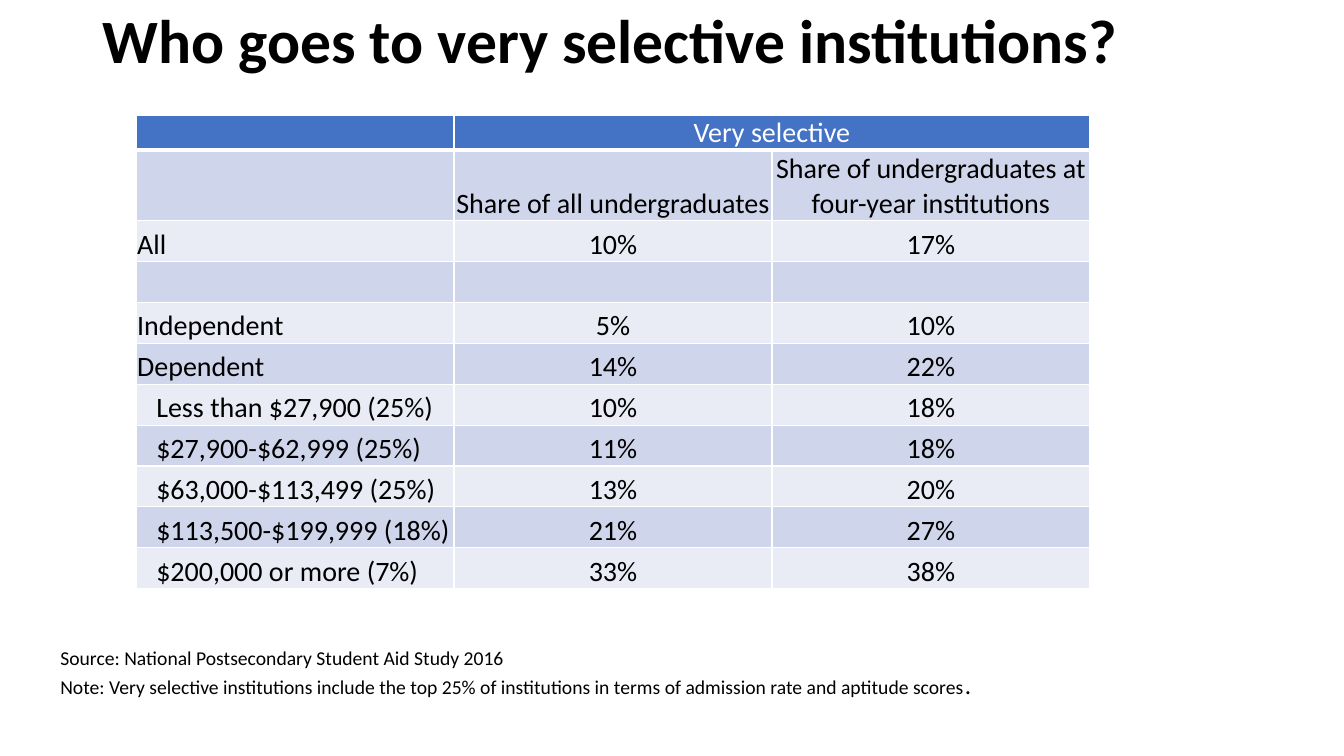
from dataclasses import dataclass

from lxml.etree import SubElement
from pptx import Presentation
from pptx.dml.color import RGBColor
from pptx.enum.text import MSO_ANCHOR, PP_ALIGN
from pptx.oxml.ns import qn
from pptx.slide import Slide
from pptx.table import _Cell
from pptx.text.text import _Run
from pptx.util import Inches, Pt

BODY_ROW_HEIGHT = 3.65 / 9
INCOME_INDENT = 0.19


@dataclass(frozen=True)
class Theme:
    font: str = "Calibri"
    ink: str = "000000"
    white: str = "FFFFFF"
    header: str = "4472C4"
    bands: tuple[str, str] = ("E9EBF5", "CFD5EA")
    title_size: int = 44
    table_size: int = 20
    note_size: int = 14
    stop_size: int = 18
    rule: int = 1
    header_rule: int = 3


@dataclass(frozen=True)
class ShareRow:
    group: str = ""
    all_undergraduates: str = ""
    four_year: str = ""
    height: float = BODY_ROW_HEIGHT
    indent: float = 0


THEME = Theme()

ROWS = [
    ShareRow("", "Very selective", height=0.35),
    ShareRow("", "Share of all undergraduates",
             "Share of undergraduates at four-year institutions", height=0.7),
    ShareRow("All", "10%", "17%"),
    ShareRow(),
    ShareRow("Independent", "5%", "10%"),
    ShareRow("Dependent", "14%", "22%"),
    ShareRow("Less than $27,900 (25%)", "10%", "18%", indent=INCOME_INDENT),
    ShareRow("$27,900-$62,999 (25%)", "11%", "18%", indent=INCOME_INDENT),
    ShareRow("$63,000-$113,499 (25%)", "13%", "20%", indent=INCOME_INDENT),
    ShareRow("$113,500-$199,999 (18%)", "21%", "27%", indent=INCOME_INDENT),
    ShareRow("$200,000 or more (7%)", "33%", "38%", indent=INCOME_INDENT),
]


def style_run(run: _Run, size: int, color: str = THEME.ink, bold: bool = False) -> None:
    run.font.name = THEME.font
    run.font.size = Pt(size)
    run.font.bold = bold
    run.font.color.rgb = RGBColor.from_string(color)


def add_borders(cell: _Cell, bottom: int) -> None:
    """Draw white rules; call before the fill, which must follow them in the XML."""
    properties = cell._tc.get_or_add_tcPr()
    widths = {"a:lnL": THEME.rule, "a:lnR": THEME.rule, "a:lnT": THEME.rule, "a:lnB": bottom}
    for side, width in widths.items():
        line = SubElement(properties, qn(side), w=str(Pt(width)))
        color = SubElement(SubElement(line, qn("a:solidFill")), qn("a:srgbClr"))
        color.set("val", THEME.white)


def fill_cell(cell: _Cell, text: str, is_header: bool, band: str, indent: float,
              align: PP_ALIGN) -> None:
    add_borders(cell, THEME.header_rule if is_header else THEME.rule)
    cell.fill.solid()
    cell.fill.fore_color.rgb = RGBColor.from_string(THEME.header if is_header else band)
    cell.margin_left = cell.margin_right = cell.margin_top = Inches(0.01)
    cell.margin_bottom = 0
    cell.vertical_anchor = MSO_ANCHOR.BOTTOM
    if not text:
        return
    cell.text_frame.text = text
    paragraph = cell.text_frame.paragraphs[0]
    paragraph.alignment = align
    if indent:
        paragraph._p.get_or_add_pPr().set("marL", str(Inches(indent)))
    style_run(paragraph.runs[0], THEME.table_size, THEME.white if is_header else THEME.ink)


def add_title(slide: Slide) -> None:
    title = slide.shapes.add_textbox(Inches(0.92), 0, Inches(11.5), Inches(0.87)).text_frame
    title.word_wrap = True
    title.vertical_anchor = MSO_ANCHOR.MIDDLE
    title.text = "Who goes to very selective institutions?"
    title.paragraphs[0].line_spacing = 0.9
    style_run(title.paragraphs[0].runs[0], THEME.title_size, bold=True)


def add_share_table(slide: Slide) -> None:
    height = sum(row.height for row in ROWS)
    shares = slide.shapes.add_table(len(ROWS), 3, Inches(1.35), Inches(1.14),
                                    Inches(9.46), Inches(height)).table
    for index, row in enumerate(ROWS):
        shares.rows[index].height = Inches(row.height)
        texts = (row.group, row.all_undergraduates, row.four_year)
        for column, text in enumerate(texts):
            is_group = column == 0
            fill_cell(shares.cell(index, column), text, index == 0, THEME.bands[index % 2],
                      row.indent if is_group else 0,
                      PP_ALIGN.LEFT if is_group else PP_ALIGN.CENTER)
    shares.cell(0, 1).merge(shares.cell(0, 2))


def add_source_note(slide: Slide) -> None:
    notes = slide.shapes.add_textbox(Inches(0.5), Inches(6.36), Inches(9.31),
                                     Inches(0.64)).text_frame
    notes.word_wrap = False
    notes.text = ("Source: National Postsecondary Student Aid Study 2016\n"
                  "Note: Very selective institutions include the top 25% of institutions "
                  "in terms of admission rate and aptitude scores")
    for paragraph in notes.paragraphs:
        style_run(paragraph.runs[0], THEME.note_size)
    full_stop = notes.paragraphs[-1].add_run()
    full_stop.text = "."
    style_run(full_stop, THEME.stop_size)


def main() -> None:
    deck = Presentation()
    deck.slide_width, deck.slide_height = Inches(13.33), Inches(7.5)
    slide = deck.slides.add_slide(deck.slide_layouts[6])
    add_title(slide)
    add_share_table(slide)
    add_source_note(slide)
    deck.save("out.pptx")


if __name__ == "__main__":
    main()
